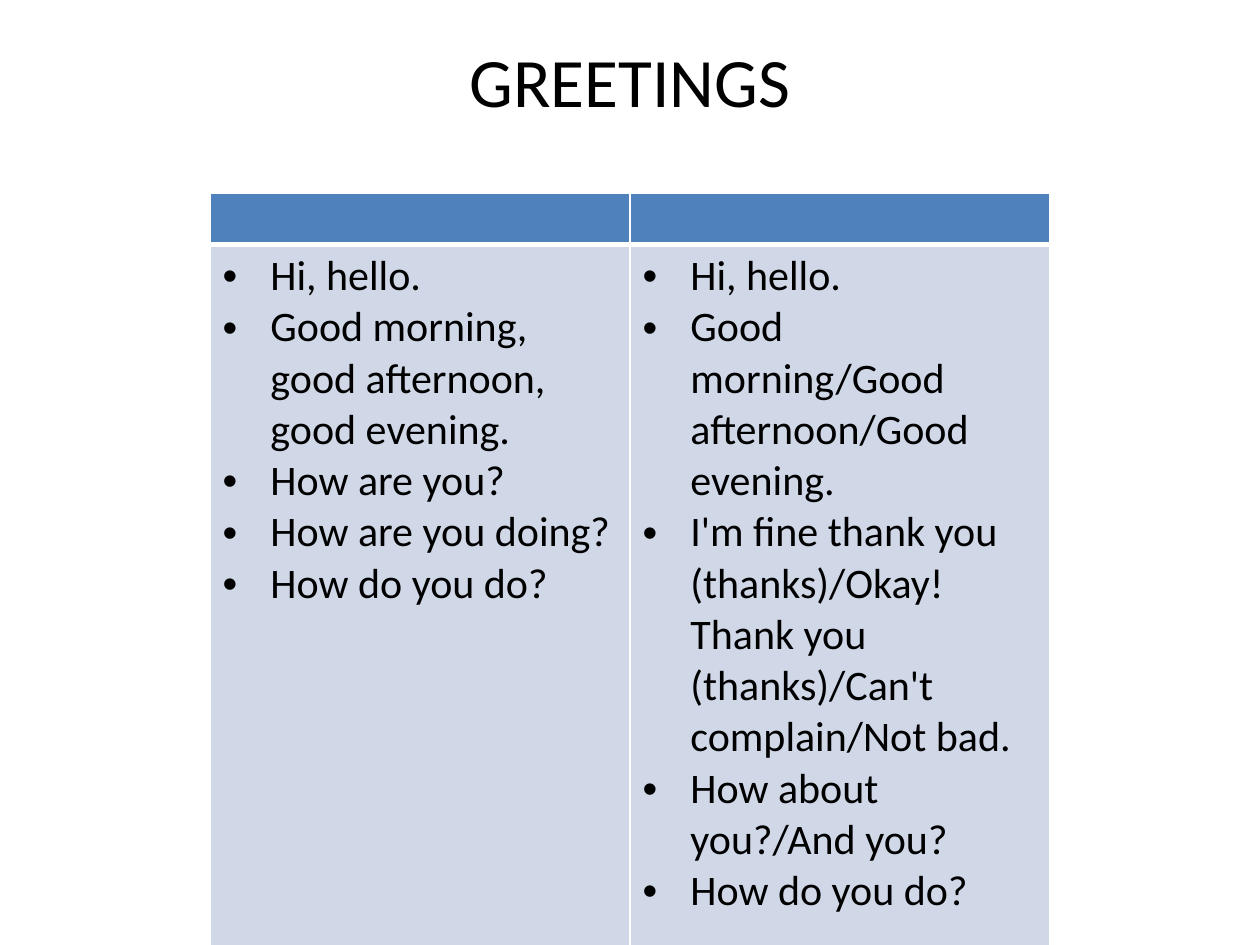
from dataclasses import dataclass

from lxml import etree
from pptx import Presentation
from pptx.dml.color import RGBColor
from pptx.enum.text import MSO_ANCHOR, PP_ALIGN
from pptx.oxml.ns import qn
from pptx.util import Emu, Inches, Pt

CENTER, LEFT = PP_ALIGN.CENTER, PP_ALIGN.LEFT
TOP = MSO_ANCHOR.TOP
SLIDE_W, SLIDE_H = Inches(10), Inches(7.5)
FONT = "Calibri"
BLACK, WHITE, HEADER_BLUE, BODY_BLUE = "000000", "FFFFFF", "4F81BD", "D0D8E8"
BULLET_INDENT = Inches(0.38)


@dataclass
class Column:
    phrases: list[str]


GREETING_COLUMNS = [
    Column([
        "Hi, hello.",
        "Good morning, good afternoon, good evening.",
        "How are you?",
        "How are you doing?",
        "How do you do?",
    ]),
    Column([
        "Hi, hello.",
        "Good morning/Good afternoon/Good evening.",
        "I'm fine thank you (thanks)/Okay! Thank you (thanks)/Can't complain/Not bad.",
        "How about you?/And you?",
        "How do you do?",
    ]),
]


def color(hex_value: str) -> RGBColor:
    return RGBColor.from_string(hex_value)


def across(share: float) -> Emu:
    return Emu(round(SLIDE_W * share))


def down(share: float) -> Emu:
    return Emu(round(SLIDE_H * share))


def write(paragraph, text: str, *, size: float, align=LEFT, bullet: bool = False) -> None:
    paragraph.alignment = align
    run = paragraph.add_run()
    run.text = text
    run.font.name = FONT
    run.font.size = Pt(size)
    run.font.bold = False
    run.font.color.rgb = color(BLACK)
    if bullet:
        properties = paragraph._p.get_or_add_pPr()
        properties.set("marL", str(BULLET_INDENT))
        properties.set("indent", str(-BULLET_INDENT))
        etree.SubElement(properties, qn("a:buFont"), typeface="Arial")
        etree.SubElement(properties, qn("a:buChar"), char="•")


def style_cell(cell, fill: str, top: float, bottom: float) -> None:
    """Draw white borders of the given widths in points, then the fill."""
    properties = cell._tc.get_or_add_tcPr()
    for side, width in (("L", 1), ("R", 1), ("T", top), ("B", bottom)):
        line = etree.SubElement(properties, qn(f"a:ln{side}"), w=str(Pt(width)))
        solid = etree.SubElement(line, qn("a:solidFill"))
        etree.SubElement(solid, qn("a:srgbClr"), val=WHITE)
    cell.fill.solid()
    cell.fill.fore_color.rgb = color(fill)


def add_title(slide, text: str) -> None:
    title = slide.shapes.add_textbox(across(0.05), down(0.04), across(0.9), down(1 / 6))
    frame = title.text_frame
    frame.word_wrap = True
    frame.vertical_anchor = TOP
    frame.margin_top = 0
    write(frame.paragraphs[0], text, size=39.6, align=CENTER)


def add_greetings(slide, columns: list[Column]) -> None:
    header_height, body_height = Inches(0.41), Inches(5.7)
    table = slide.shapes.add_table(
        2, len(columns), across(1 / 6), Inches(1.53), across(2 / 3),
        header_height + body_height).table
    table.first_row = table.horz_banding = False
    table.rows[0].height, table.rows[1].height = header_height, body_height
    for index, column in enumerate(columns):
        header, body = table.cell(0, index), table.cell(1, index)
        style_cell(header, HEADER_BLUE, top=1, bottom=3)
        style_cell(body, BODY_BLUE, top=3, bottom=1)
        frame = body.text_frame
        for number, phrase in enumerate(column.phrases):
            paragraph = frame.add_paragraph() if number else frame.paragraphs[0]
            write(paragraph, phrase, size=24, bullet=True)


def main() -> None:
    deck = Presentation()
    deck.slide_width, deck.slide_height = SLIDE_W, SLIDE_H
    slide = deck.slides.add_slide(deck.slide_layouts[6])
    # Heading, then the two-column phrase table
    add_title(slide, "GREETINGS")
    add_greetings(slide, GREETING_COLUMNS)
    deck.save("out.pptx")


if __name__ == "__main__":
    main()
